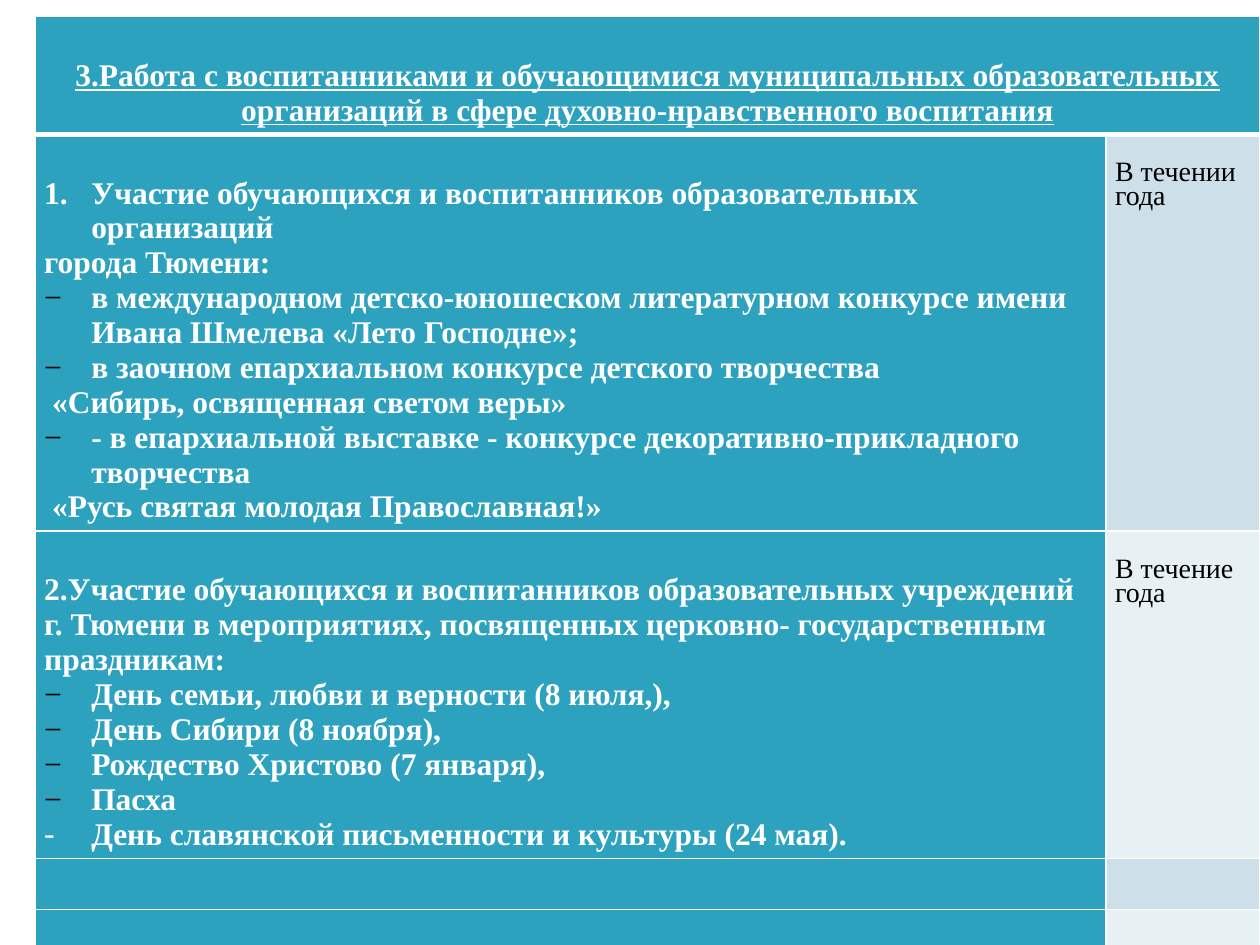
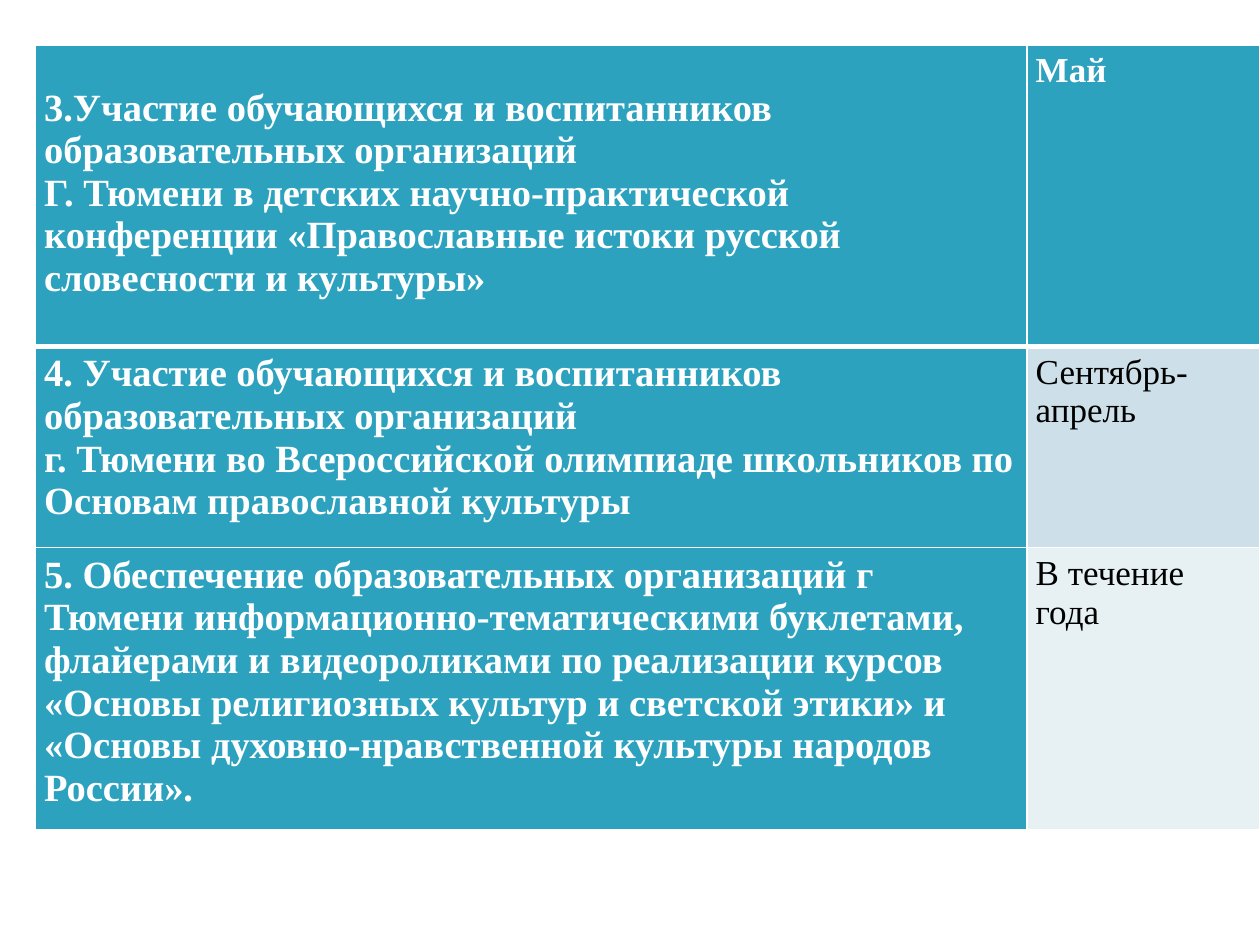
"""Build two slides with the work plan tables on spiritual and moral education."""
from lxml import etree
from pptx import Presentation
from pptx.dml.color import RGBColor
from pptx.enum.text import PP_ALIGN
from pptx.oxml.ns import qn
from pptx.util import Cm, Pt

CENTER = PP_ALIGN.CENTER
FONT = "Times New Roman"
TEAL, WHITE, BLACK = "2DA2BF", "FFFFFF", "000000"
BANDS = ["CDDFE8", "E7F0F3"]
LEFT = 0.71
TOP_INSET = 0.13
TASK_INSET = 0.84
TERM_INSET = 0.61
HANGING = 0.95
MARKERS = {
    "number": ("buAutoNum", {"type": "arabicPeriod"}, WHITE),
    "dash": ("buChar", {"char": "−"}, BLACK),
    "hyphen": ("buChar", {"char": "-"}, WHITE),
}


def color(value):
    return RGBColor.from_string(value)


def add_element(parent, tag, **attributes):
    return etree.SubElement(parent, qn(f"a:{tag}"), attributes)


plans = [
    {
        "top": 0.33,
        "columns": [21.59, 3.1],
        "heights": [2.11, 7.72, 6.32, 0.71, 0.71, 0.71],
        "task_size": 18,
        "term_size": 16,
        "term_inset": TERM_INSET,
        "term_spacing": Pt(13.4),
        "lowered_rows": [0, 1, 2],
        "heading": True,
        "rows": [
            ([("", "3.Работа с воспитанниками и обучающимися муниципальных образовательных "
                   "организаций в сфере духовно-нравственного воспитания")], ""),
            ([("number", "Участие обучающихся и воспитанников образовательных организаций"),
              ("", "города Тюмени:"),
              ("dash", "в международном детско-юношеском литературном конкурсе имени "
                       "Ивана Шмелева «Лето Господне»;"),
              ("dash", "в заочном епархиальном конкурсе детского творчества"),
              ("inset", "«Сибирь, освященная светом веры»"),
              ("dash", "- в епархиальной выставке - конкурсе декоративно-прикладного творчества"),
              ("inset", "«Русь святая молодая Православная!»")], "В течении года"),
            ([("", "2.Участие обучающихся и воспитанников образовательных учреждений "
                   "г. Тюмени в мероприятиях, посвященных церковно- государственным праздникам:"),
              ("dash", "День семьи, любви и верности (8 июля,),"),
              ("dash", "День Сибири (8 ноября),"),
              ("dash", "Рождество Христово (7 января),"),
              ("dash", "Пасха"),
              ("hyphen", "День славянской письменности и культуры (24 мая).")], "В течение года"),
            ([], ""),
            ([], ""),
            ([], ""),
        ],
    },
    {
        "top": 0.91,
        "columns": [19.99, 4.7],
        "heights": [6.07, 4.06, 5.69],
        "task_size": 22,
        "term_size": 20,
        "term_inset": TOP_INSET,
        "term_spacing": None,
        "lowered_rows": [0],
        "heading": False,
        "rows": [
            ([("", "3.Участие обучающихся и воспитанников образовательных организаций"),
              ("", "Г. Тюмени в детских научно-практической конференции "
                   "«Православные истоки русской словесности и культуры»")], "Май"),
            ([("", "4. Участие обучающихся и воспитанников образовательных организаций"),
              ("", "г. Тюмени во Всероссийской олимпиаде школьников по "
                   "Основам православной культуры")], "Сентябрь-апрель"),
            ([("", "5. Обеспечение образовательных организаций г Тюмени "
                   "информационно-тематическими буклетами, флайерами и видеороликами по реализации "
                   "курсов «Основы религиозных культур и светской этики» и «Основы "
                   "духовно-нравственной культуры народов России».")], "В течение года"),
        ],
    },
]

deck = Presentation()
deck.slide_width, deck.slide_height = Cm(25.4), Cm(19.05)
blank_layout = deck.slide_layouts[6]

for plan in plans:
    slide = deck.slides.add_slide(blank_layout)
    frame = slide.shapes.add_table(
        len(plan["rows"]), 2, Cm(LEFT), Cm(plan["top"]),
        Cm(sum(plan["columns"])), Cm(sum(plan["heights"])))
    table = frame.table
    for column, width in zip(table.columns, plan["columns"]):
        column.width = Cm(width)
    if plan["heading"]:
        table.cell(0, 0).merge(table.cell(0, 1))

    for row_index, (tasks, term) in enumerate(plan["rows"]):
        table.rows[row_index].height = Cm(plan["heights"][row_index])
        is_heading = plan["heading"] and row_index == 0
        for column_index, lines in enumerate([tasks, [("", term)] if term else []]):
            cell = table.cell(row_index, column_index)
            is_task = column_index == 0
            is_strong = is_task or row_index == 0
            inset = TOP_INSET
            if row_index in plan["lowered_rows"]:
                inset = TASK_INSET if is_task else plan["term_inset"]
            cell.margin_left = cell.margin_right = Cm(0.18)
            cell.margin_top, cell.margin_bottom = Cm(inset), Cm(TOP_INSET)

            properties = cell._tc.get_or_add_tcPr()
            for side in ("L", "R", "T", "B"):
                thick = (row_index, side) in [(0, "B"), (1, "T")]
                border = add_element(properties, f"ln{side}", w=str(Pt(3 if thick else 0.96)))
                add_element(add_element(border, "solidFill"), "srgbClr", val=WHITE)
            cell.fill.solid()
            cell.fill.fore_color.rgb = color(TEAL if is_strong else BANDS[(row_index - 1) % 2])

            for line_index, (kind, text) in enumerate(lines):
                text_frame = cell.text_frame
                para = text_frame.add_paragraph() if line_index else text_frame.paragraphs[0]
                para.text = text
                layout = para._p.get_or_add_pPr()
                if kind in MARKERS:
                    tag, attributes, marker_color = MARKERS[kind]
                    layout.set("marL", str(Cm(HANGING)))
                    layout.set("indent", str(-Cm(HANGING)))
                    add_element(add_element(layout, "buClr"), "srgbClr", val=marker_color)
                    add_element(layout, "buFont", typeface=FONT)
                    add_element(layout, tag, **attributes)
                elif kind == "inset":
                    layout.set("marL", str(Cm(0.16)))
                if is_heading:
                    para.alignment = CENTER
                if not is_task and plan["term_spacing"]:
                    para.line_spacing = plan["term_spacing"]
                font = para.runs[0].font
                font.name = FONT
                font.size = Pt(plan["task_size"] if is_task else plan["term_size"])
                font.bold = is_strong
                font.underline = is_heading
                font.color.rgb = color(WHITE if is_strong else BLACK)

deck.save("out.pptx")
